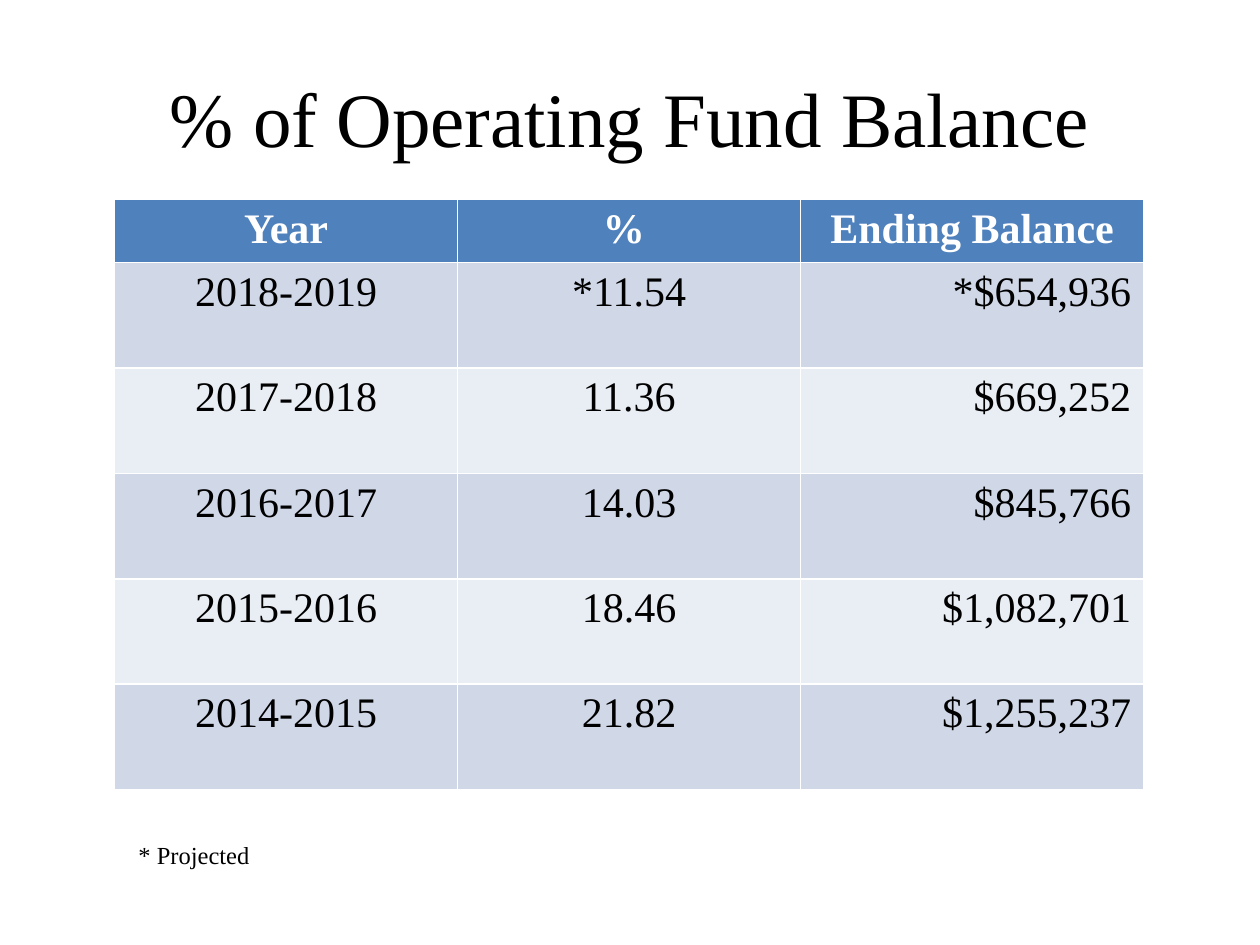
from pptx import Presentation
from pptx.dml.color import RGBColor
from pptx.enum import text
from pptx.util import Pt

TITLE = "% of Operating Fund Balance"
FOOTNOTE = "* Projected"
ROWS = [
    ("Year", "% ", "Ending Balance"),
    ("2018-2019", "*11.54", "*$654,936"),
    ("2017-2018", "11.36", "$669,252"),
    ("2016-2017", "14.03", "$845,766"),
    ("2015-2016", "18.46", "$1,082,701"),
    ("2014-2015", "21.82", "$1,255,237"),
]
COLORS = {"text": "000000", "header_text": "FFFFFF", "header": "4F81BD",
          "odd": "D0D8E8", "even": "E9EDF4"}
FONT = "Times New Roman"
LEFT, TOP, COL_W = 65.5, 114, 196
HEADER_H, ROW_H = 33.1, 60.25
ALIGN = text.PP_ALIGN


def rgb(name):
    return RGBColor.from_string(COLORS[name])


def write(tf, words, size, align, color="text", bold=False):
    tf.text = words
    p = tf.paragraphs[0]
    p.alignment = align
    font = p.runs[0].font
    font.name, font.size, font.bold = FONT, Pt(size), bold
    font.color.rgb = rgb(color)


def add_text(slide, box, words, size, align, anchor):
    tf = slide.shapes.add_textbox(*map(Pt, box)).text_frame
    tf.word_wrap = True
    tf.vertical_anchor = anchor
    write(tf, words, size, align)


def add_balance_table(slide):
    heights = [HEADER_H] + [ROW_H] * (len(ROWS) - 1)
    n_cols = len(ROWS[0])
    table = slide.shapes.add_table(len(ROWS), n_cols, Pt(LEFT), Pt(TOP),
                                   Pt(COL_W * n_cols), Pt(sum(heights))).table
    for col in table.columns:
        col.width = Pt(COL_W)
    for i, (values, height) in enumerate(zip(ROWS, heights)):
        table.rows[i].height = Pt(height)
        header = i == 0
        fill = "header" if header else "odd" if i % 2 else "even"
        for j, value in enumerate(values):
            cell = table.cell(i, j)
            cell.fill.solid()
            cell.fill.fore_color.rgb = rgb(fill)
            amount = not header and j == n_cols - 1
            write(cell.text_frame, value, 24, ALIGN.RIGHT if amount else ALIGN.CENTER,
                  "header_text" if header else "text", header)


def main():
    prs = Presentation()
    prs.slide_width, prs.slide_height = Pt(720), Pt(540)
    slide = prs.slides.add_slide(prs.slide_layouts[6])
    add_text(slide, (36, 21.6, 648, 90), TITLE, 44, ALIGN.CENTER, text.MSO_ANCHOR.MIDDLE)
    add_balance_table(slide)
    add_text(slide, (72, 476.64, 257.76, 24.5), FOOTNOTE, 14, ALIGN.LEFT, text.MSO_ANCHOR.TOP)
    prs.save("out.pptx")


if __name__ == "__main__":
    main()
